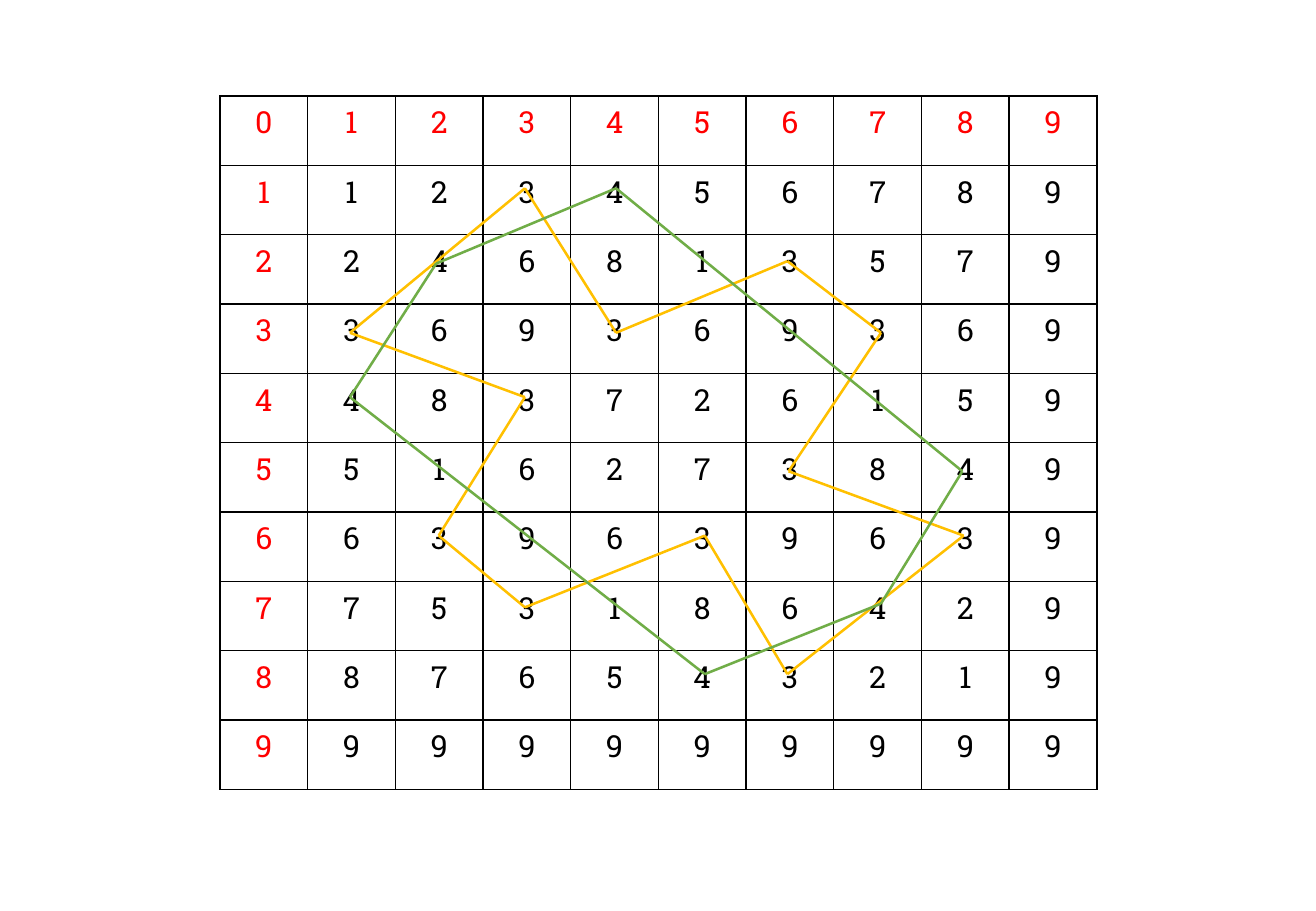
from dataclasses import dataclass
from itertools import product

from lxml.etree import SubElement
from pptx import Presentation
from pptx.dml.color import RGBColor as Color
from pptx.enum.shapes import MSO_CONNECTOR as Link
from pptx.enum.text import PP_ALIGN as Align
from pptx.oxml.ns import qn
from pptx.slide import Slide
from pptx.table import _Cell as Cell
from pptx.util import Inches, Pt


@dataclass(frozen=True)
class Theme:
    font: str = "Roboto Slab"
    size: int = 18
    edge: int = 1
    line: float = 1.5
    ink: str = "000000"
    head: str = "FF0000"
    gold: str = "FFC000"
    green: str = "70AD47"


@dataclass(frozen=True)
class Loop:
    color: str
    points: tuple[tuple[float, float], ...]


THEME = Theme()
COUNT = 10
LEFT, TOP, WIDTH, HEIGHT = 1.81, 0.79, 7.22, 5.71

LOOPS = (
    Loop(THEME.gold, (
        (4.32, 1.55), (2.88, 2.74), (4.32, 3.27), (3.61, 4.41),
        (4.32, 5), (5.8, 4.41), (6.48, 5.55), (7.93, 4.41),
        (6.49, 3.88), (7.25, 2.74), (6.48, 2.15), (5.07, 2.74),
    )),
    Loop(THEME.green, (
        (5.07, 1.55), (3.59, 2.17), (2.88, 3.27),
        (5.8, 5.55), (7.25, 4.97), (7.92, 3.88),
    )),
)


def digit(row: int, col: int) -> int:
    if row == 0 or col == 0:
        return row + col
    return 1 + (row * col - 1) % 9


def add_edges(cell: Cell) -> None:
    props = cell._tc.get_or_add_tcPr()
    for side in ("lnL", "lnR", "lnT", "lnB"):
        edge = SubElement(props, qn(f"a:{side}"), w=str(Pt(THEME.edge)))
        fill = SubElement(edge, qn("a:solidFill"))
        SubElement(fill, qn("a:srgbClr"), val=THEME.ink)


def fill_cell(cell: Cell, row: int, col: int) -> None:
    add_edges(cell)
    cell.fill.background()
    cell.margin_left = cell.margin_right = Inches(0.08)
    cell.margin_top = cell.margin_bottom = Inches(0.05)
    cell.text_frame.text = str(digit(row, col))
    para = cell.text_frame.paragraphs[0]
    para.alignment = Align.CENTER
    font = para.runs[0].font
    font.name = THEME.font
    font.size = Pt(THEME.size)
    shade = THEME.ink if row and col else THEME.head
    font.color.rgb = Color.from_string(shade)


def add_square(slide: Slide) -> None:
    table = slide.shapes.add_table(
        COUNT, COUNT, Inches(LEFT), Inches(TOP), Inches(WIDTH), Inches(HEIGHT)
    ).table
    table.first_row = table.horz_banding = False
    for row, col in product(range(COUNT), repeat=2):
        fill_cell(table.cell(row, col), row, col)


def add_loop(slide: Slide, loop: Loop) -> None:
    ends = loop.points[1:] + loop.points[:1]
    for start, end in zip(loop.points, ends):
        line = slide.shapes.add_connector(
            Link.STRAIGHT, *map(Inches, start + end)
        )
        line.line.color.rgb = Color.from_string(loop.color)
        line.line.width = Pt(THEME.line)
        SubElement(line._element.spPr, qn("a:effectLst"))


def main() -> None:
    deck = Presentation()
    deck.slide_width, deck.slide_height = Inches(10.83), Inches(7.5)
    slide = deck.slides.add_slide(deck.slide_layouts[6])
    add_square(slide)
    for loop in LOOPS:
        add_loop(slide, loop)
    deck.save("out.pptx")


if __name__ == "__main__":
    main()
